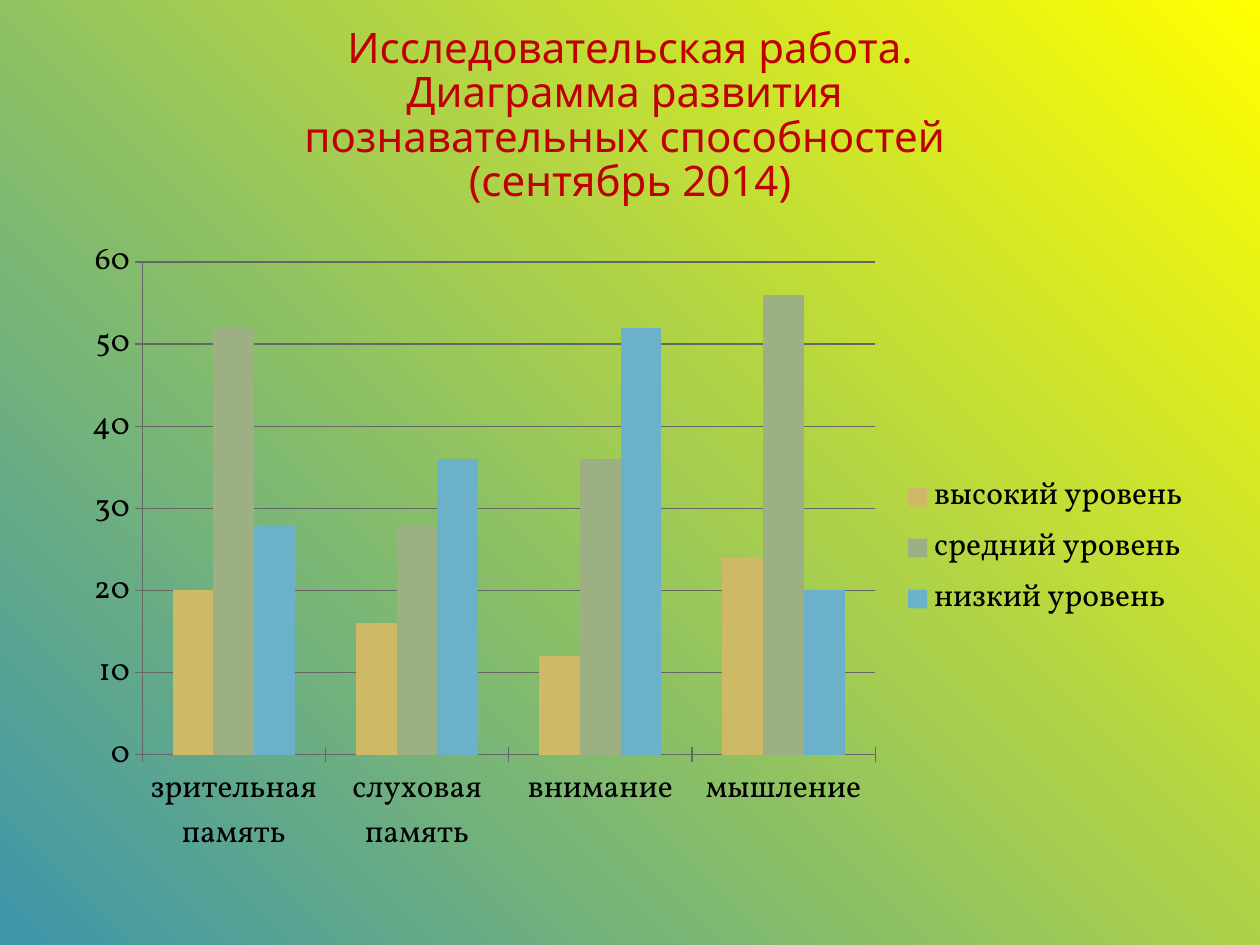
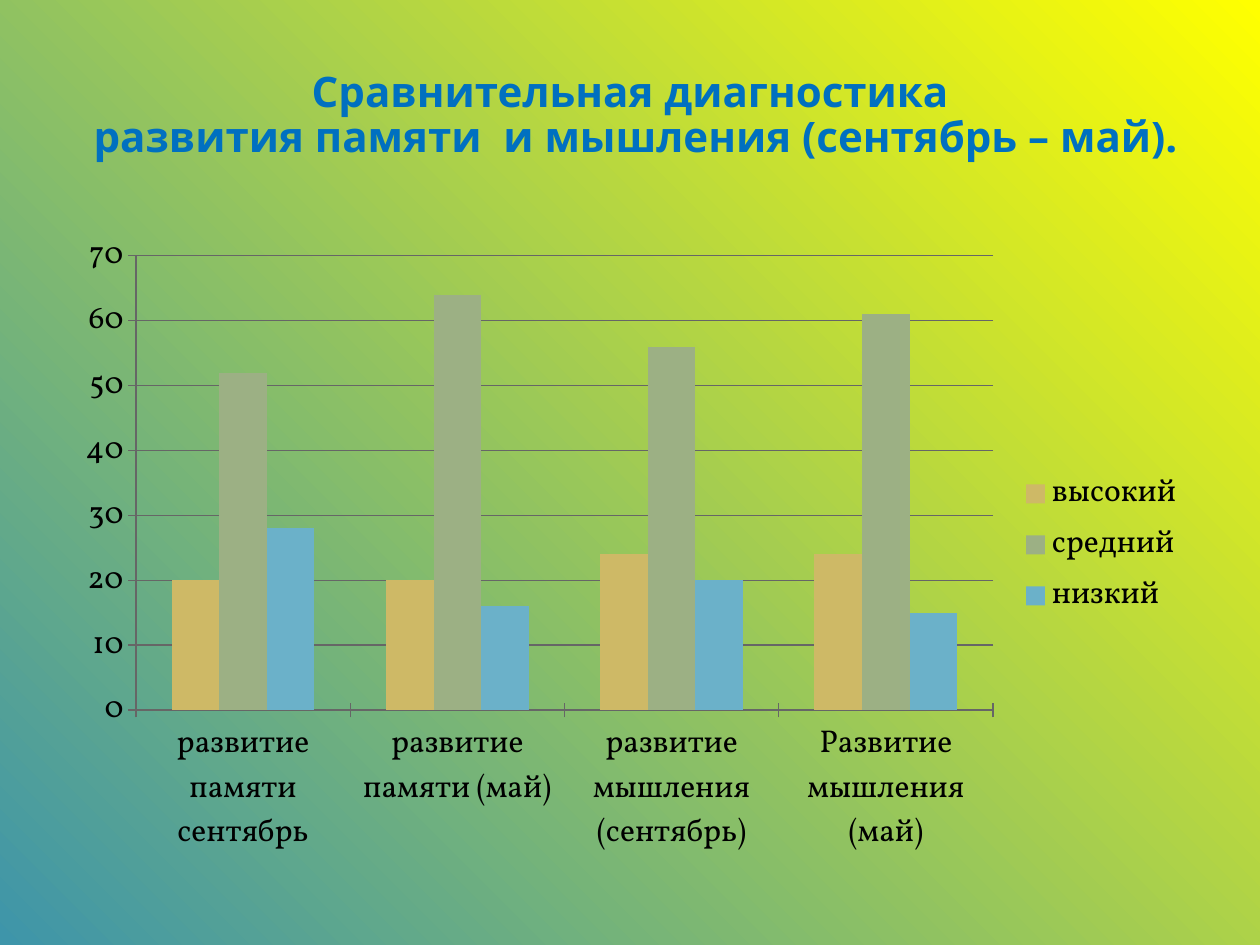
from dataclasses import dataclass

from lxml import etree
from pptx import Presentation
from pptx.chart.data import CategoryChartData
from pptx.dml.color import RGBColor
from pptx.enum.chart import XL_CHART_TYPE, XL_LEGEND_POSITION, XL_TICK_MARK
from pptx.enum.text import MSO_ANCHOR, PP_ALIGN
from pptx.oxml.ns import qn
from pptx.util import Pt

COLUMNS = XL_CHART_TYPE.COLUMN_CLUSTERED
LEGEND_RIGHT = XL_LEGEND_POSITION.RIGHT
TICK_CROSS = XL_TICK_MARK.CROSS
TICK_NONE = XL_TICK_MARK.NONE
MIDDLE = MSO_ANCHOR.MIDDLE
CENTER = PP_ALIGN.CENTER


@dataclass(frozen=True)
class Theme:
    glow: str = "FFFF00"
    sea: str = "3E95AA"
    red: str = "C00000"
    blue: str = "0070C0"
    ink: str = "000000"
    axis: str = "666666"
    levels: tuple = ("CEB966", "9CB084", "6BB1C9")
    title_font: str = "Noto Sans"
    chart_font: str = "Vollkorn"
    title_size: int = 24
    chart_size: int = 18


THEME = Theme()


def color(code):
    return RGBColor.from_string(code)


def add_title(page, text, ink, bold=False):
    box = page.shapes.add_textbox(Pt(36), Pt(21.6), Pt(648), Pt(90))
    frame = box.text_frame
    frame.word_wrap = True
    frame.vertical_anchor = MIDDLE
    para = frame.paragraphs[0]
    para.alignment = CENTER
    para.line_spacing = 0.88
    for number, line in enumerate(text.split("\n")):
        if number:
            para.add_line_break()
        span = para.add_run()
        span.text = line
        span.font.name = THEME.title_font
        span.font.size = Pt(THEME.title_size)
        span.font.bold = bold
        span.font.color.rgb = color(ink)


# What each slide says
SLIDES = [
    {
        "title": "Исследовательская работа.\nДиаграмма развития \n"
                 "познавательных способностей \n(сентябрь 2014)",
        "ink": THEME.red,
        "bold": False,
        "area": (39.6, 129.6, 648, 367.2),
        "top_value": 60,
        "categories": ["зрительная память", "слуховая память", "внимание", "мышление"],
        "series": {
            "высокий уровень": (20, 16, 12, 24),
            "средний уровень": (52, 28, 36, 56),
            "низкий уровень": (28, 36, 52, 20),
        },
    },
    {
        "title": "Сравнительная диагностика\n"
                 " развития памяти  и мышления (сентябрь – май).",
        "ink": THEME.blue,
        "bold": True,
        "area": (36, 126, 648, 370.8),
        "top_value": 70,
        "categories": ["развитие памяти сентябрь", "развитие памяти (май)",
                       "развитие мышления (сентябрь)", "Развитие мышления (май)"],
        "series": {
            "высокий": (20, 20, 24, 24),
            "средний": (52, 64, 56, 61),
            "низкий": (28, 16, 20, 15),
        },
    },
]

deck = Presentation()
deck.slide_width, deck.slide_height = Pt(720), Pt(540)
blank = deck.slide_layouts[6]

for content in SLIDES:
    page = deck.slides.add_slide(blank)

    # Background: circular gradient out of the top right corner
    fill = page.background.fill
    fill.gradient()
    for stop, code in zip(fill.gradient_stops, (THEME.glow, THEME.sea)):
        stop.color.rgb = color(code)
    fill.gradient_stops[0].position = 0
    fill.gradient_stops[1].position = 1
    gradient = page.background._cSld.find(".//" + qn("a:gradFill"))
    gradient.remove(gradient.find(qn("a:lin")))
    circle = etree.SubElement(gradient, qn("a:path"), path="circle")
    etree.SubElement(circle, qn("a:fillToRect"), l="100000", b="100000")

    add_title(page, content["title"], ink=content["ink"], bold=content["bold"])

    # Chart and its data
    data = CategoryChartData()
    data.categories = content["categories"]
    for name, values in content["series"].items():
        data.add_series(name, values)
    area = [Pt(length) for length in content["area"]]
    chart = page.shapes.add_chart(COLUMNS, *area, data).chart
    chart.has_title = False
    chart.font.name = THEME.chart_font
    chart.font.size = Pt(THEME.chart_size)
    chart.font.color.rgb = color(THEME.ink)

    # Columns
    plot = chart.plots[0]
    plot.gap_width = 150
    plot.overlap = 0
    plot.vary_by_categories = False
    for series, code in zip(plot.series, THEME.levels):
        series.format.fill.solid()
        series.format.fill.fore_color.rgb = color(code)

    # Axes, grid and legend
    values_axis = chart.value_axis
    values_axis.minimum_scale = 0
    values_axis.maximum_scale = content["top_value"]
    values_axis.major_unit = 10
    values_axis.has_major_gridlines = True
    for axis in (chart.category_axis, values_axis):
        axis.major_tick_mark = TICK_CROSS
        axis.minor_tick_mark = TICK_NONE
    for part in (chart.category_axis, values_axis, values_axis.major_gridlines):
        part.format.line.color.rgb = color(THEME.axis)
        part.format.line.width = Pt(0.75)
    chart.has_legend = True
    chart.legend.position = LEGEND_RIGHT
    chart.legend.include_in_layout = False

deck.save("out.pptx")
